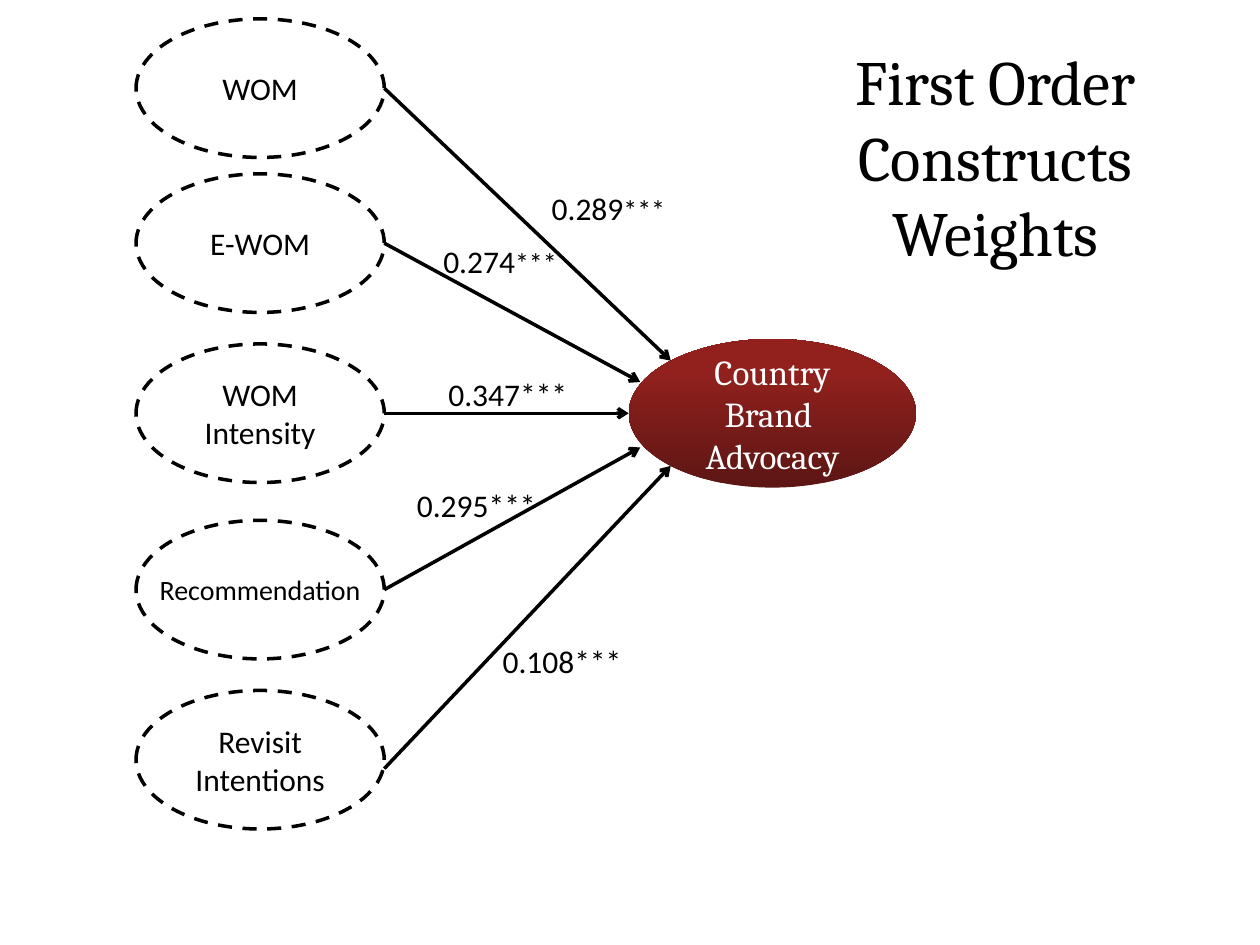
import dataclasses

import pptx
import pptx.dml.color
import pptx.enum.dml
import pptx.enum.shapes
import pptx.enum.text
import pptx.oxml
import pptx.util
from lxml import etree

Inches = pptx.util.Inches
Pt = pptx.util.Pt
RGB = pptx.dml.color.RGBColor
ALIGN = pptx.enum.text.PP_ALIGN
OVAL = pptx.enum.shapes.MSO_SHAPE.OVAL


@dataclasses.dataclass(frozen=True)
class Theme:
    """Colours, fonts and sizes of the diagram."""
    ink: RGB = RGB(0x00, 0x00, 0x00)
    paper: RGB = RGB(0xFF, 0xFF, 0xFF)
    hub_stops: tuple = ((0, RGB(0x5C, 0x16, 0x14)), (0.8, RGB(0x92, 0x21, 0x1E)))
    serif: str = "Cambria"
    sans: str = "Calibri"
    title: int = 36
    hub: int = 20
    body: int = 18
    small: int = 16
    line: int = 2


THEME = Theme()
HUB_BOX = (4.99, 2.69, 2.28, 1.18)
TITLE_BOX = (6.09, 0.29, 3.62, 1.25)
NODE_LEFT, NODE_WIDTH, NODE_HEIGHT = 1.08, 1.97, 1.1

CONSTRUCTS = (
    {"name": "WOM", "top": 0.15, "leave": 0.55, "reach": (0.146, 0.146),
     "weight": "0.289", "label": (4.28, 1.45, 1.4, 0.4), "stars": THEME.small},
    {"name": "E-WOM", "top": 1.38, "leave": 0.55, "reach": (0.04, 0.29),
     "weight": "0.274", "label": (3.42, 1.87, 1.2, 0.4), "stars": THEME.small},
    {"name": "WOM Intensity", "top": 2.73, "leave": 0.55, "reach": (0, 0.5),
     "weight": "0.347", "label": (3.46, 2.93, 1.18, 0.4), "stars": THEME.body},
    {"name": "Recommendation", "top": 4.13, "leave": 0.55, "reach": (0.04, 0.73),
     "weight": "0.295", "label": (3.21, 3.81, 1.18, 0.4), "stars": THEME.body,
     "size": THEME.small, "wrap": False},
    {"name": "Revisit Intentions", "top": 5.48, "leave": 0.62, "reach": (0.146, 0.854),
     "weight": "0.108", "label": (3.89, 5.05, 1.18, 0.4), "stars": THEME.body},
)


def set_all(target, values):
    """Set each named attribute of the target."""
    for name, value in values.items():
        setattr(target, name, value)


def write(frame, lines, font, color, align):
    """Write lines, each a list of (text, size) runs, into a text frame."""
    for index, runs in enumerate(lines):
        paragraph = frame.add_paragraph() if index else frame.paragraphs[0]
        paragraph.alignment = align
        for text, size in runs:
            run = paragraph.add_run()
            run.text = text
            set_all(run.font, {"name": font, "size": Pt(size)})
            run.font.color.rgb = color


def add_oval(slide, box, wrap=True):
    """Add an ellipse with centred, inset-free text."""
    shape = slide.shapes.add_shape(OVAL, *map(Inches, box))
    shape.shadow.inherit = False
    set_all(shape.text_frame, {
        "margin_left": 0, "margin_right": 0, "margin_top": 0, "margin_bottom": 0,
        "word_wrap": wrap, "vertical_anchor": pptx.enum.text.MSO_ANCHOR.MIDDLE})
    return shape


def add_hub(slide, box):
    """Add the gradient ellipse that all arrows point to."""
    shape = add_oval(slide, box)
    shape.line.fill.background()
    shape.fill.gradient()
    shape.fill.gradient_angle = 90
    for stop, (position, color) in zip(shape.fill.gradient_stops, THEME.hub_stops):
        stop.position = position
        stop.color.rgb = color
    lines = [[(text, THEME.hub)] for text in ("Country", "Brand ", "Advocacy")]
    write(shape.text_frame, lines, THEME.serif, THEME.paper, ALIGN.CENTER)


def add_construct(slide, box, construct):
    """Add one dashed ellipse with its construct name."""
    shape = add_oval(slide, box, construct.get("wrap", True))
    shape.fill.solid()
    shape.fill.fore_color.rgb = THEME.paper
    shape.line.color.rgb = THEME.ink
    set_all(shape.line, {"width": Pt(THEME.line),
                         "dash_style": pptx.enum.dml.MSO_LINE.DASH})
    runs = [(construct["name"], construct.get("size", THEME.body))]
    write(shape.text_frame, [runs], THEME.sans, THEME.ink, ALIGN.CENTER)


def add_arrow(slide, start, end):
    """Add an open-headed arrow from start to end."""
    connector = slide.shapes.add_connector(
        pptx.enum.shapes.MSO_CONNECTOR.STRAIGHT, *map(Inches, start + end))
    connector.line.color.rgb = THEME.ink
    connector.line.width = Pt(THEME.line)
    head = etree.SubElement(connector.line._get_or_add_ln(),
                            pptx.oxml.ns.qn("a:tailEnd"))
    head.set("type", "arrow")
    etree.SubElement(connector._element.spPr, pptx.oxml.ns.qn("a:effectLst"))


def add_text(slide, box, runs, font, align, grow=False):
    """Add a wrapping text box with one paragraph."""
    frame = slide.shapes.add_textbox(*map(Inches, box)).text_frame
    fit = pptx.enum.text.MSO_AUTO_SIZE
    set_all(frame, {"word_wrap": True,
                    "auto_size": fit.SHAPE_TO_FIT_TEXT if grow else fit.NONE})
    write(frame, [runs], font, THEME.ink, align)


def add_path(slide, construct, hub_box):
    """Add a construct, its arrow to the hub and its weight."""
    top = construct["top"]
    left, hub_top, width, height = hub_box
    across, down = construct["reach"]
    add_construct(slide, (NODE_LEFT, top, NODE_WIDTH, NODE_HEIGHT), construct)
    add_arrow(slide, (NODE_LEFT + NODE_WIDTH, top + construct["leave"]),
              (left + across * width, hub_top + down * height))
    if construct["stars"] == THEME.body:
        runs = [(construct["weight"] + "***", THEME.body)]
    else:
        runs = [(construct["weight"], THEME.body), ("***", construct["stars"])]
    add_text(slide, construct["label"], runs, THEME.sans, ALIGN.LEFT, grow=True)


def main():
    """Build and save the slide."""
    presentation = pptx.Presentation()
    set_all(presentation, {"slide_width": Inches(10), "slide_height": Inches(7.5)})
    slide = presentation.slides.add_slide(presentation.slide_layouts[6])
    add_hub(slide, HUB_BOX)
    for construct in CONSTRUCTS:
        add_path(slide, construct, HUB_BOX)
    add_text(slide, TITLE_BOX, [("First Order Constructs Weights", THEME.title)],
             THEME.serif, ALIGN.CENTER)
    presentation.save("out.pptx")


if __name__ == "__main__":
    main()
